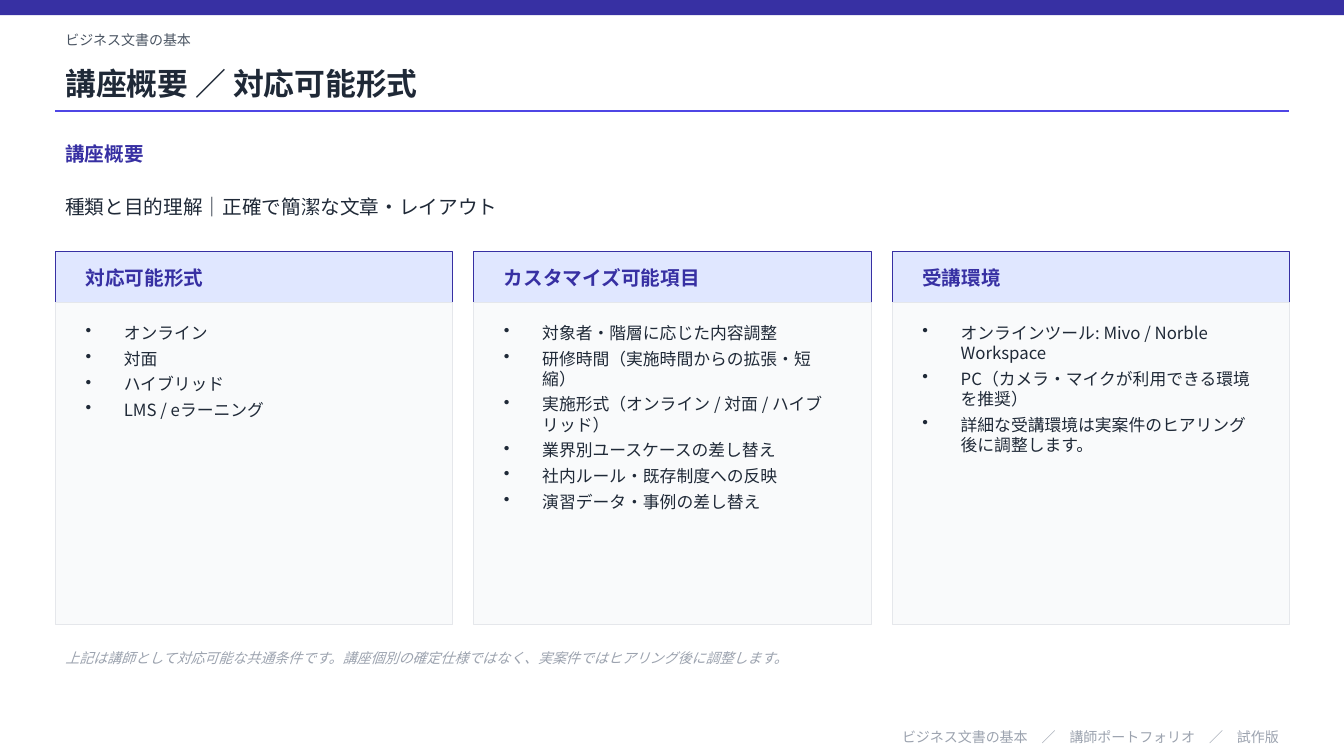
from pptx import Presentation
from pptx.dml.color import RGBColor
from pptx.enum.shapes import MSO_CONNECTOR, MSO_SHAPE
from pptx.enum.text import MSO_ANCHOR, PP_ALIGN
from pptx.oxml.ns import qn
from pptx.util import Inches, Pt
from lxml import etree

RECT = MSO_SHAPE.RECTANGLE
LINE = MSO_CONNECTOR.STRAIGHT
MIDDLE, TOP = MSO_ANCHOR.MIDDLE, MSO_ANCHOR.TOP
RIGHT = PP_ALIGN.RIGHT

FONT = "Noto Sans CJK JP"
INDIGO, VIOLET, PALE = "3730A3", "4F46E5", "E0E7FF"
INK, SLATE, GRAY = "1F2937", "4B5563", "9CA3AF"
PANEL, EDGE = "F9FAFB", "E5E7EB"

# text, top, height, size, colour, style
LINES = [
    ("ビジネス文書の基本", 0.25, 0.3, 10, SLATE, {}),
    ("講座概要 ／ 対応可能形式", 0.55, 0.55, 22, INK, {"bold": True}),
    ("講座概要", 1.35, 0.35, 14, INDIGO, {"bold": True}),
    ("種類と目的理解｜正確で簡潔な文章・レイアウト", 1.75, 0.6, 14, INK, {}),
    ("上記は講師として対応可能な共通条件です。講座個別の確定仕様ではなく、"
     "実案件ではヒアリング後に調整します。", 6.35, 0.35, 10, GRAY, {"italic": True}),
    ("ビジネス文書の基本　／　講師ポートフォリオ　／　試作版",
     7.2, 0.22, 10, GRAY, {"align": RIGHT}),
]
CARDS = [
    ("対応可能形式", [
        "オンライン",
        "対面",
        "ハイブリッド",
        "LMS / eラーニング",
    ]),
    ("カスタマイズ可能項目", [
        "対象者・階層に応じた内容調整",
        "研修時間（実施時間からの拡張・短縮）",
        "実施形式（オンライン / 対面 / ハイブリッド）",
        "業界別ユースケースの差し替え",
        "社内ルール・既存制度への反映",
        "演習データ・事例の差し替え",
    ]),
    ("受講環境", [
        "オンラインツール: Mivo / Norble Workspace",
        "PC（カメラ・マイクが利用できる環境を推奨）",
        "詳細な受講環境は実案件のヒアリング後に調整します。",
    ]),
]

WIDTH, HEIGHT = 13.33, 7.5
LEFT, GAP, PAD = 0.55, 0.21, 0.2
SPAN = WIDTH - 2 * LEFT
CARD_W = 3.94
HEAD_Y, HEAD_H, BODY_H = 2.5, 0.5, 3.2
BODY_Y = HEAD_Y + HEAD_H


def rgb(code):
    return RGBColor.from_string(code)


def add_rect(x, y, w, h, fill, edge=None):
    box = slide.shapes.add_shape(RECT, Inches(x), Inches(y), Inches(w), Inches(h))
    box.shadow.inherit = False
    box.fill.solid()
    box.fill.fore_color.rgb = rgb(fill)
    if edge:
        box.line.color.rgb = rgb(edge)
        box.line.width = Pt(0.75)
    else:
        box.line.fill.background()


def add_bullet(para):
    props = para._p.get_or_add_pPr()
    props.set("marL", str(Inches(0.38)))
    props.set("indent", str(-Inches(0.38)))
    etree.SubElement(props, qn("a:buChar")).set("char", "•")


def add_text(texts, x, y, w, h, size, color, bold=False, italic=False,
             align=None, bullets=False):
    """Add a text box with one paragraph per text."""
    box = slide.shapes.add_textbox(Inches(x), Inches(y), Inches(w), Inches(h))
    frame = box.text_frame
    frame.word_wrap = True
    frame.vertical_anchor = TOP if bullets else MIDDLE
    for i, text in enumerate(texts):
        para = frame.add_paragraph() if i else frame.paragraphs[0]
        para.text = text
        if align is not None:
            para.alignment = align
        if bullets:
            para.space_after = Pt(4)
            add_bullet(para)
        font = para.font
        font.name = FONT
        font.size = Pt(size)
        font.bold = bold
        font.italic = italic
        font.color.rgb = rgb(color)
        base = para._p.pPr.find(qn("a:defRPr"))
        etree.SubElement(base, qn("a:ea")).set("typeface", FONT)


deck = Presentation()
deck.slide_width, deck.slide_height = Inches(WIDTH), Inches(HEIGHT)
slide = deck.slides.add_slide(deck.slide_layouts[6])

add_rect(0, 0, WIDTH, 0.15, INDIGO)
rule = slide.shapes.add_connector(
    LINE, Inches(LEFT), Inches(1.1), Inches(LEFT + SPAN), Inches(1.1))
rule.line.color.rgb = rgb(VIOLET)
rule.line.width = Pt(1)
etree.SubElement(rule._element.spPr, qn("a:effectLst"))

for text, y, h, size, color, style in LINES:
    add_text([text], LEFT, y, SPAN, h, size, color, **style)

for i, (title, items) in enumerate(CARDS):
    x = LEFT + i * (CARD_W + GAP)
    inner = CARD_W - 2 * PAD
    add_rect(x, HEAD_Y, CARD_W, HEAD_H, PALE, INDIGO)
    add_text([title], x + PAD, HEAD_Y, inner, HEAD_H, 14, INDIGO, bold=True)
    add_rect(x, BODY_Y, CARD_W, BODY_H, PANEL, EDGE)
    add_text(items, x + PAD, BODY_Y + 0.15, inner, 2.85, 12, INK, bullets=True)

deck.save("out.pptx")
